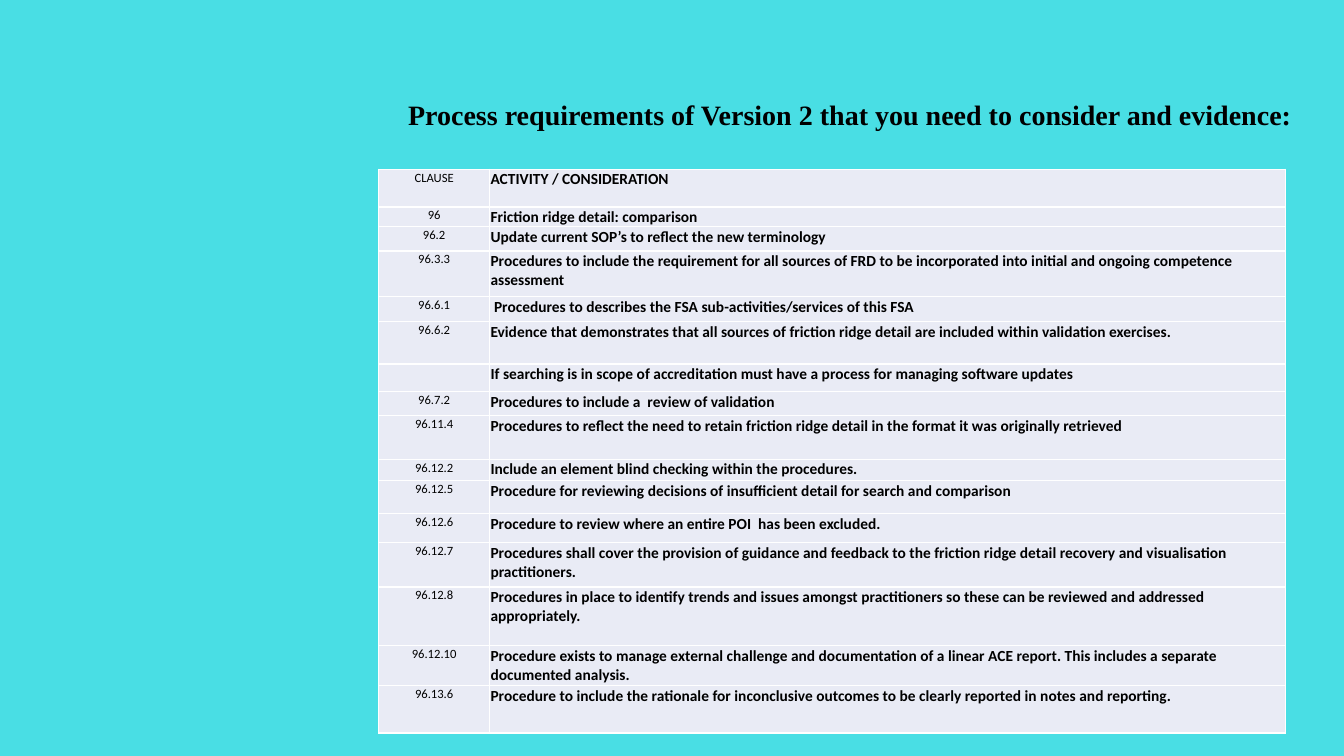
import pptx
import pptx.dml.color
import pptx.enum.text
import pptx.oxml
import pptx.oxml.ns
import pptx.util

Pt = pptx.util.Pt
ALIGN = pptx.enum.text.PP_ALIGN
ANCHOR = pptx.enum.text.MSO_ANCHOR

HEADING = "Process requirements of Version 2 that you need to consider and evidence:"
REQUIREMENTS = [
    (27, "CLAUSE", "ACTIVITY / CONSIDERATION"),
    (14, "96", "Friction ridge detail: comparison"),
    (17.5, "96.2", "Update current SOP’s to reflect the new terminology"),
    (32.5, "96.3.3", "Procedures to include the requirement for all sources of FRD to be "
     "incorporated into initial and ongoing competence assessment"),
    (18, "96.6.1", " Procedures to describes the FSA sub-activities/services of this FSA"),
    (30.3, "96.6.2", "Evidence that demonstrates that all sources of friction ridge detail "
     "are included within validation exercises."),
    (19.5, "", "If searching is in scope of accreditation must have a process for "
     "managing software updates"),
    (17.5, "96.7.2", "Procedures to include a  review of validation"),
    (31, "96.11.4", "Procedures to reflect the need to retain friction ridge detail in the "
     "format it was originally retrieved"),
    (15.3, "96.12.2", "Include an element blind checking within the procedures."),
    (23.6, "96.12.5", "Procedure for reviewing decisions of insufficient detail for search "
     "and comparison"),
    (20.7, "96.12.6", "Procedure to review where an entire POI  has been excluded."),
    (31.8, "96.12.7", "Procedures shall cover the provision of guidance and feedback to the "
     "friction ridge detail recovery and visualisation practitioners."),
    (41.7, "96.12.8", "Procedures in place to identify trends and issues amongst "
     "practitioners so these can be reviewed and addressed appropriately."),
    (28.6, "96.12.10", "Procedure exists to manage external challenge and documentation of a "
     "linear ACE report. This includes a separate documented analysis."),
    (34, "96.13.6", "Procedure to include the rationale for inconclusive outcomes to be "
     "clearly reported in notes and reporting."),
]
COLUMN_WIDTHS = (79.2, 568.8)
HEADING_FONT = {"name": "Times New Roman", "size": Pt(20), "bold": True}
CLAUSE_FONT = {"name": "Calibri", "size": Pt(9), "bold": False}
ACTIVITY_FONT = {"name": "Calibri", "size": Pt(11), "bold": True}
CELL_FORMAT = {
    "margin_left": Pt(0.7),
    "margin_right": Pt(0.7),
    "margin_top": Pt(0.7),
    "margin_bottom": Pt(0),
    "vertical_anchor": ANCHOR.TOP,
}
HEADING_FORMAT = {"word_wrap": True, "vertical_anchor": ANCHOR.MIDDLE}


def set_all(target, values):
    """Set every attribute named in a dict of format values."""
    for name, value in values.items():
        setattr(target, name, value)


def paint(color_format, color):
    """Give a colour format the colour of a hex string."""
    color_format.rgb = pptx.dml.color.RGBColor.from_string(color)


def write(paragraph, text, font, alignment):
    """Write black text in one paragraph."""
    paragraph.alignment = alignment
    if not text:
        end = paragraph._p.get_or_add_endParaRPr()
        end.set("sz", str(int(font["size"].pt * 100)))
        return
    run = paragraph.add_run()
    run.text = text
    set_all(run.font, font)
    paint(run.font.color, "000000")


def add_borders(cell, color, width):
    """Draw a solid line on all four sides of a cell."""
    properties = cell._tc.get_or_add_tcPr()
    for position, side in enumerate(("lnL", "lnR", "lnT", "lnB")):
        properties.insert(position, pptx.oxml.parse_xml(
            f'<a:{side} {pptx.oxml.ns.nsdecls("a")} w="{Pt(width)}">'
            f'<a:solidFill><a:srgbClr val="{color}"/></a:solidFill></a:{side}>'))


def fill_cell(cell, text, font, alignment):
    """Fill one table cell with formatted text, a background and borders."""
    set_all(cell, CELL_FORMAT)
    cell.fill.solid()
    paint(cell.fill.fore_color, "E9EBF5")
    write(cell.text_frame.paragraphs[0], text, font, alignment)
    add_borders(cell, "FFFFFF", 1)


def add_heading(slide):
    """Add the heading above the table."""
    heading = slide.shapes.add_textbox(Pt(284.4), Pt(61), Pt(669.6), Pt(41)).text_frame
    set_all(heading, HEADING_FORMAT)
    write(heading.paragraphs[0], HEADING, HEADING_FONT, ALIGN.LEFT)


def add_requirements(slide):
    """Add the table of clauses and activities."""
    heights = [height for height, _, _ in REQUIREMENTS]
    table = slide.shapes.add_table(
        len(REQUIREMENTS), len(COLUMN_WIDTHS), Pt(270.5), Pt(120.8),
        Pt(sum(COLUMN_WIDTHS)), Pt(sum(heights))).table
    set_all(table, {"first_row": False, "horz_banding": False})
    for column, width in zip(table.columns, COLUMN_WIDTHS):
        column.width = Pt(width)
    for row, (height, clause, activity) in zip(table.rows, REQUIREMENTS):
        row.height = Pt(height)
        fill_cell(row.cells[0], clause, CLAUSE_FONT, ALIGN.CENTER)
        fill_cell(row.cells[1], activity, ACTIVITY_FONT, ALIGN.LEFT)


def main():
    """Build the slide and save it."""
    presentation = pptx.Presentation()
    set_all(presentation, {"slide_width": Pt(960), "slide_height": Pt(540)})
    slide = presentation.slides.add_slide(presentation.slide_layouts[6])
    slide.background.fill.solid()
    paint(slide.background.fill.fore_color, "49DEE4")
    add_heading(slide)
    add_requirements(slide)
    presentation.save("out.pptx")


if __name__ == "__main__":
    main()
